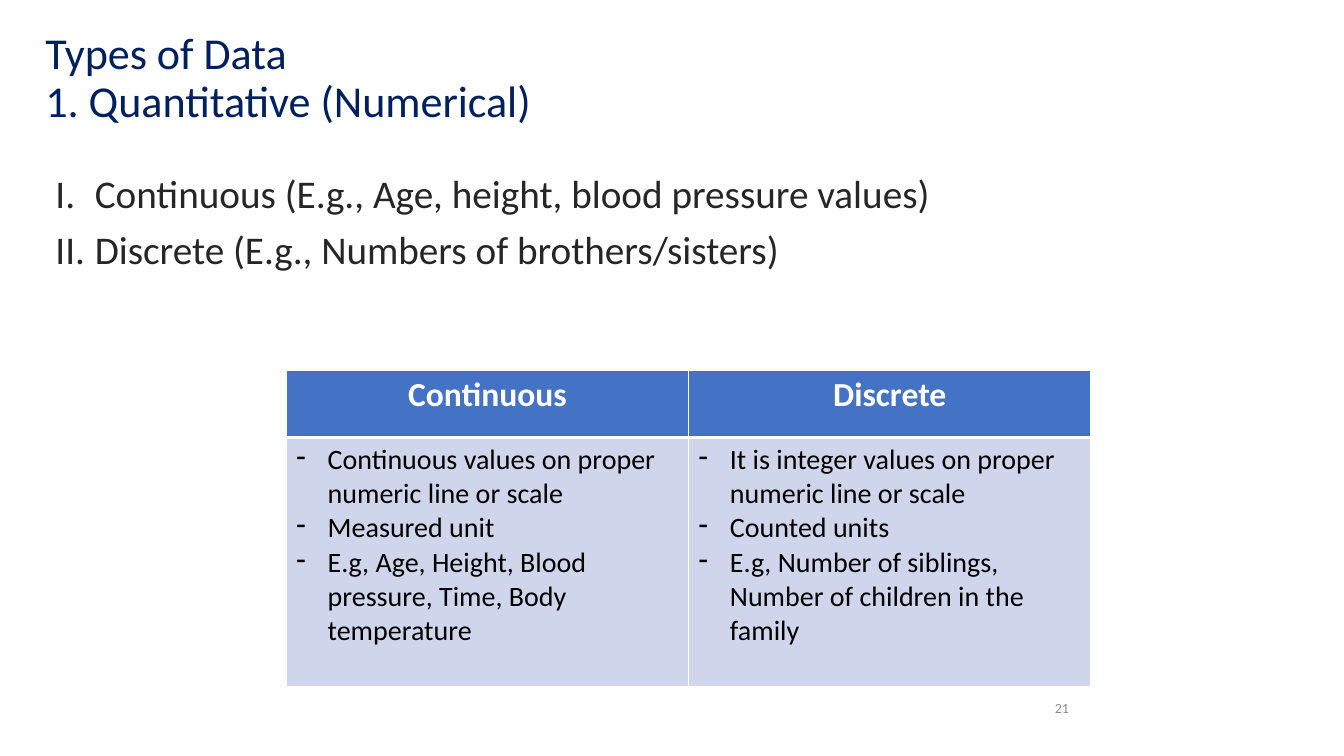
from lxml import etree
from pptx import Presentation
from pptx.dml.color import RGBColor
from pptx.enum.text import MSO_ANCHOR, PP_ALIGN
from pptx.oxml.ns import qn
from pptx.util import Inches, Pt

LEFT, CENTER, RIGHT = PP_ALIGN.LEFT, PP_ALIGN.CENTER, PP_ALIGN.RIGHT
MIDDLE, TOP = MSO_ANCHOR.MIDDLE, MSO_ANCHOR.TOP
COLORS = {
    "title": "002060", "list": "262626", "number": "8C8C8C",
    "header": "4472C4", "body": "CFD5EA", "white": "FFFFFF", "black": "000000",
}
MARGIN = 0.35
TABLE_LEFT, TABLE_TOP, COLUMN_WIDTH = 2.84, 3.67, 3.99
ROW_HEIGHTS = [0.67, 2.47]


def write(frame, lines, size, color, align=LEFT, bold=False, anchor=TOP,
          spacing=1.0, gap=0, bullet=None, indent=0):
    """Fill a text frame; bullet is a (tag, attributes) pair, indent is in inches."""
    frame.word_wrap = True
    frame.text = "\n".join(lines)
    for index, paragraph in enumerate(frame.paragraphs):
        if bullet:
            tag, attributes = bullet
            properties = paragraph._p.get_or_add_pPr()
            properties.set("marL", str(Inches(indent)))
            properties.set("indent", str(-Inches(min(indent, 0.39))))
            etree.SubElement(properties, qn(tag), attributes)
        paragraph.alignment = align
        paragraph.line_spacing = spacing
        paragraph.space_before = Pt(gap if index else 0)
        for run in paragraph.runs:
            run.font.name = "Calibri"
            run.font.size = Pt(size)
            run.font.bold = bold
            run.font.color.rgb = RGBColor.from_string(COLORS[color])
    frame.vertical_anchor = anchor


def place(shape, left, top, width, height):
    shape.left, shape.top = Inches(left), Inches(top)
    shape.width, shape.height = Inches(width), Inches(height)


deck = Presentation()
deck.slide_width, deck.slide_height = Inches(13.33), Inches(7.5)
slide = deck.slides.add_slide(deck.slide_layouts[1])

title, data_types = slide.placeholders
place(title, MARGIN, 0.22, 9.41, 1.13)
write(title.text_frame, ["Types of Data\v1. Quantitative (Numerical)"],
      size=31.5, color="title", anchor=MIDDLE, spacing=0.9)

place(data_types, MARGIN, 1.68, 12.07, 5.04)
write(data_types.text_frame,
      ["Continuous (E.g., Age, height, blood pressure values)",
       "Discrete (E.g., Numbers of brothers/sisters)"],
      size=28, color="list", spacing=0.9, gap=10,
      bullet=("a:buAutoNum", {"type": "romanUcPeriod"}), indent=0.49)

page_number = slide.shapes.add_textbox(
    Inches(8.85), Inches(6.86), Inches(1.85), Inches(0.32))
write(page_number.text_frame, ["21"], size=10, color="number",
      align=RIGHT, anchor=MIDDLE)

comparison = {
    "Continuous": [
        "Continuous values on proper numeric line or scale",
        "Measured unit",
        "E.g, Age, Height, Blood pressure, Time, Body temperature",
    ],
    "Discrete": [
        "It is integer values on proper numeric line or scale",
        "Counted units",
        "E.g, Number of siblings, Number of children in the family",
    ],
}
table = slide.shapes.add_table(
    len(ROW_HEIGHTS), len(comparison), Inches(TABLE_LEFT), Inches(TABLE_TOP),
    Inches(COLUMN_WIDTH * len(comparison)), Inches(sum(ROW_HEIGHTS))).table
for row, height in zip(table.rows, ROW_HEIGHTS):
    row.height = Inches(height)

for column, (heading, features) in enumerate(comparison.items()):
    table.columns[column].width = Inches(COLUMN_WIDTH)
    header, body = table.cell(0, column), table.cell(1, column)
    write(header.text_frame, [heading], size=24, color="white",
          align=CENTER, bold=True)
    write(body.text_frame, features, size=20, color="black",
          bullet=("a:buChar", {"char": "-"}), indent=0.31)
    for cell, fill, thick_side in ((header, "header", "lnB"), (body, "body", "lnT")):
        cell_properties = cell._tc.get_or_add_tcPr()
        for side in ("lnL", "lnR", "lnT", "lnB"):
            width = Pt(3 if side == thick_side else 1)
            border = etree.SubElement(cell_properties, qn(f"a:{side}"), w=str(width))
            paint = etree.SubElement(border, qn("a:solidFill"))
            etree.SubElement(paint, qn("a:srgbClr"), val=COLORS["white"])
        cell.fill.solid()
        cell.fill.fore_color.rgb = RGBColor.from_string(COLORS[fill])

deck.save("out.pptx")
